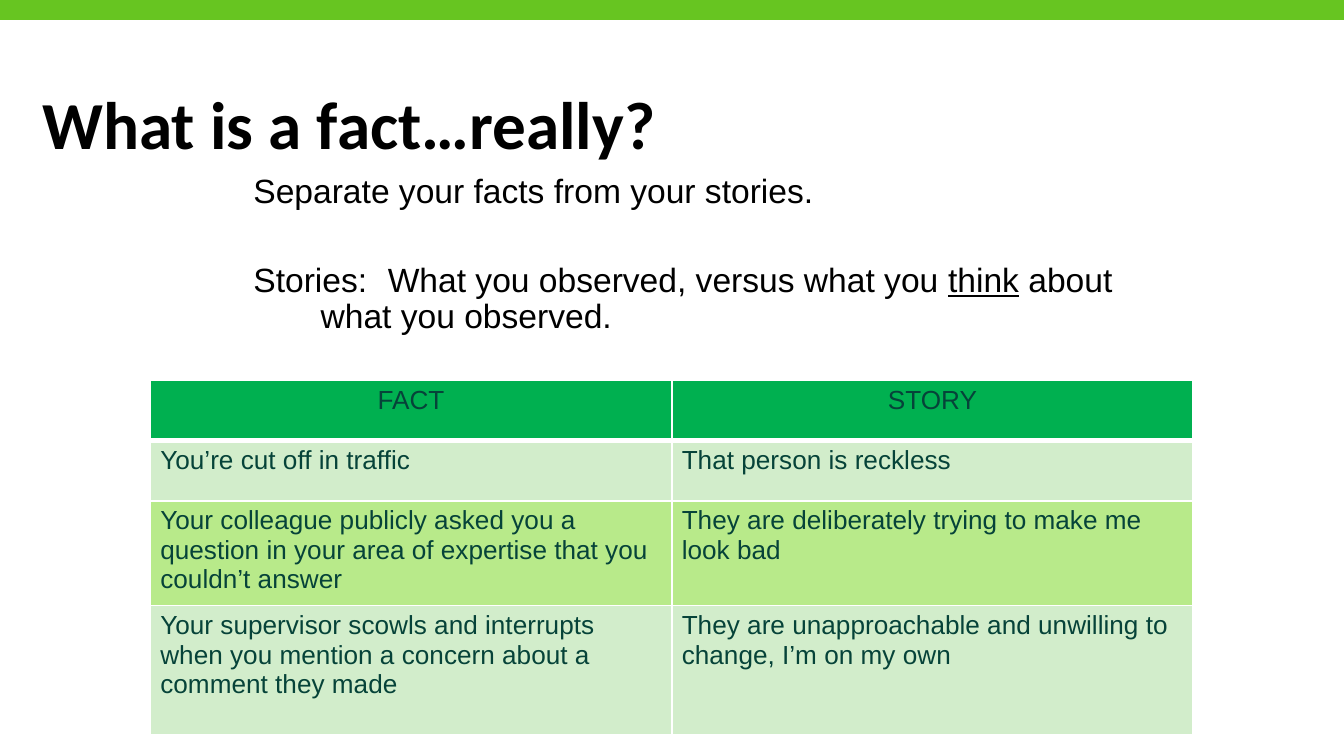
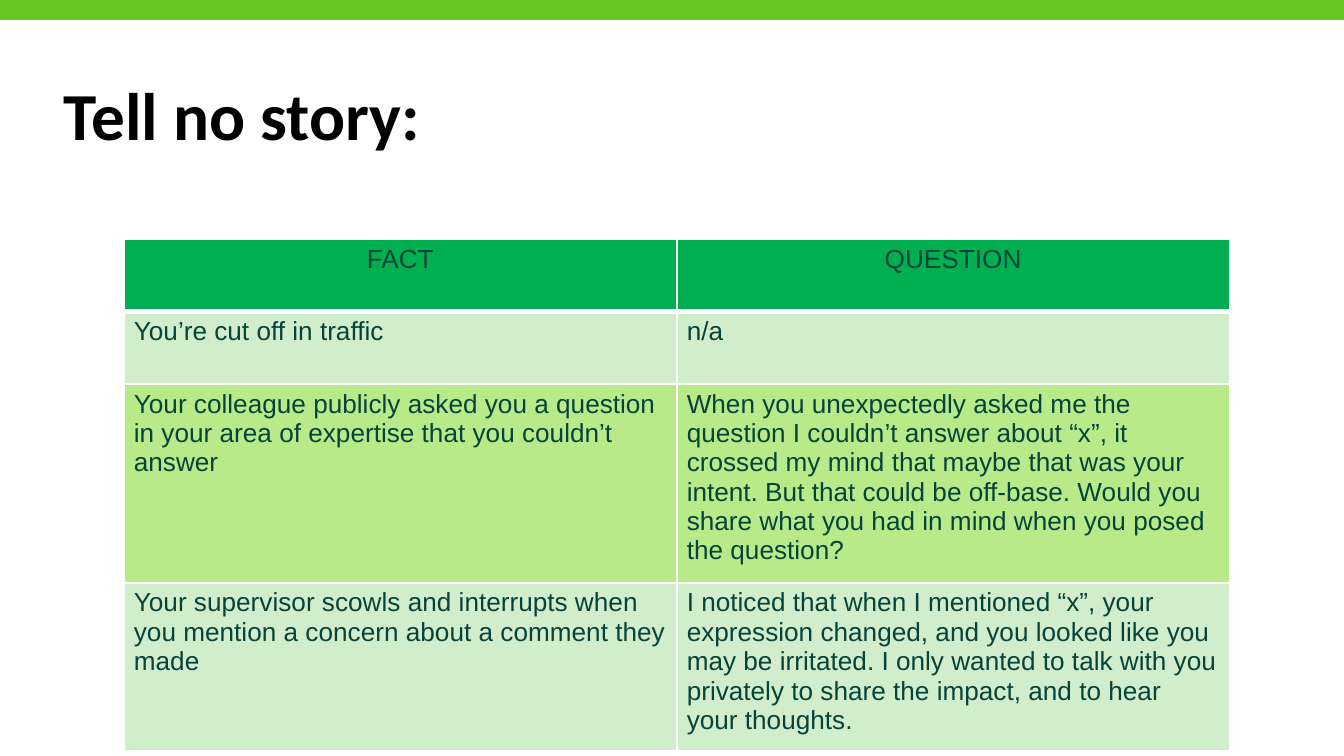
from lxml import etree
from pptx import Presentation
from pptx.dml.color import RGBColor
from pptx.enum import shapes, text
from pptx.oxml import ns
from pptx.util import Cm, Pt

BAND_GREEN = RGBColor(0x67, 0xC5, 0x21)
HEADER_GREEN = RGBColor(0x00, 0xB0, 0x50)
PALE_GREEN = RGBColor(0xD2, 0xED, 0xCB)
LIME = RGBColor(0xB8, 0xEA, 0x8A)
TABLE_TEXT = RGBColor(0x06, 0x43, 0x39)
BLACK = RGBColor(0x00, 0x00, 0x00)
WHITE = RGBColor(0xFF, 0xFF, 0xFF)
ROW_FILLS = [HEADER_GREEN, PALE_GREEN, LIME, PALE_GREEN]

SLIDE_WIDTH, SLIDE_HEIGHT = Cm(25.4), Cm(14.29)
INSET_X, INSET_Y = Cm(0.19), Cm(0.1)

FACTS = [
    "FACT",
    "You’re cut off in traffic",
    "Your colleague publicly asked you a question in your area of expertise "
    "that you couldn’t answer",
    "Your supervisor scowls and interrupts when you mention a concern about "
    "a comment they made",
]
STORIES = [
    "STORY",
    "That person is reckless",
    "They are deliberately trying to make me look bad",
    "They are unapproachable and unwilling to change, I’m on my own",
]
QUESTIONS = [
    "QUESTION",
    "n/a",
    "When you unexpectedly asked me the question I couldn’t answer about “x”, "
    "it crossed my mind that maybe that was your intent. But that could be "
    "off-base. Would you share what you had in mind when you posed the question?",
    "I noticed that when I mentioned “x”, your expression changed, and you "
    "looked like you may be irritated. I only wanted to talk with you privately "
    "to share the impact, and to hear your thoughts.",
]


def set_insets(target):
    """Apply the shared margins to a text frame or a table cell."""
    target.margin_left = target.margin_right = INSET_X
    target.margin_top = target.margin_bottom = INSET_Y


def format_paragraph(paragraph, font_name, size, color, bold=False):
    for run in paragraph.runs:
        run.font.name = font_name
        run.font.size = Pt(size)
        run.font.color.rgb = color
        run.font.bold = bold


def add_text_frame(slide, box):
    frame = slide.shapes.add_textbox(*box).text_frame
    frame.word_wrap = True
    set_insets(frame)
    return frame


def space_paragraph(paragraph, after=4.5):
    paragraph.line_spacing = 0.9
    paragraph.space_after = Pt(after)


def add_slide(presentation, title, title_box):
    """Blank slide with the top band and the title."""
    slide = presentation.slides.add_slide(presentation.slide_layouts[6])

    # Top band
    band = slide.shapes.add_shape(
        shapes.MSO_SHAPE.RECTANGLE, 0, 0, SLIDE_WIDTH, Cm(0.38))
    band.shadow.inherit = False
    band.fill.solid()
    band.fill.fore_color.rgb = BAND_GREEN
    band.line.fill.background()

    # Title
    frame = add_text_frame(slide, title_box)
    frame.vertical_anchor = text.MSO_ANCHOR.MIDDLE
    frame.text = title
    space_paragraph(frame.paragraphs[0])
    format_paragraph(frame.paragraphs[0], "Calibri", 36, BLACK, bold=True)
    return slide


def add_explanation(slide, box):
    frame = add_text_frame(slide, box)
    frame.text = "Separate your facts from your stories."
    advice = frame.paragraphs[0]
    space_paragraph(advice, after=28)

    definition = frame.add_paragraph()
    space_paragraph(definition)
    definition.add_run().text = "Stories: \tWhat you observed, versus what you "
    emphasis = definition.add_run()
    emphasis.text = "think"
    emphasis.font.underline = True
    definition.add_run().text = " about "
    definition.add_line_break()
    definition.add_run().text = "\twhat you observed."

    for paragraph in frame.paragraphs:
        format_paragraph(paragraph, "Arial", 18, BLACK)


def set_borders(cell, bottom_width):
    properties = cell._tc.get_or_add_tcPr()
    for side, width in zip("LRTB", (1, 1, 1, bottom_width)):
        line = etree.SubElement(
            properties, ns.qn(f"a:ln{side}"), w=str(Pt(width)))
        fill = etree.SubElement(line, ns.qn("a:solidFill"))
        etree.SubElement(fill, ns.qn("a:srgbClr"), val=str(WHITE))


def add_comparison(slide, left, top, width, row_heights, columns):
    """Table with a header row and equal columns."""
    table = slide.shapes.add_table(
        len(row_heights), len(columns), left, top, width,
        sum(row_heights)).table
    table.first_row = table.horz_banding = False

    for row, height in zip(table.rows, row_heights):
        row.height = height
    for column_index, entries in enumerate(columns):
        table.columns[column_index].width = width // len(columns)
        for row_index, entry in enumerate(entries):
            is_header = row_index == 0
            cell = table.cell(row_index, column_index)
            set_insets(cell)
            set_borders(cell, bottom_width=3 if is_header else 1)
            cell.fill.solid()
            cell.fill.fore_color.rgb = ROW_FILLS[row_index]
            cell.text_frame.text = entry
            paragraph = cell.text_frame.paragraphs[0]
            if is_header:
                paragraph.alignment = text.PP_ALIGN.CENTER
            format_paragraph(paragraph, "Arial", 14, TABLE_TEXT)


def add_fact_slide(presentation):
    slide = add_slide(presentation, "What is a fact…really?",
                      (Cm(0.61), Cm(1.12), Cm(19.71), Cm(2.59)))
    add_explanation(slide, (Cm(4.6), Cm(3.2), Cm(19.5), Cm(3.94)))
    add_comparison(slide, Cm(2.84), Cm(7.19), Cm(19.71),
                   [Cm(1.14), Cm(1.14), Cm(1.7), Cm(2.44)],
                   [FACTS, STORIES])


def add_question_slide(presentation):
    slide = add_slide(presentation, "Tell no story:",
                      (Cm(1.02), Cm(1.35), Cm(22.73), Cm(1.8)))
    add_comparison(slide, Cm(2.34), Cm(4.52), Cm(20.9),
                   [Cm(1.37), Cm(1.37), Cm(2.36), Cm(2.92)],
                   [FACTS, QUESTIONS])


def main():
    presentation = Presentation()
    presentation.slide_width = SLIDE_WIDTH
    presentation.slide_height = SLIDE_HEIGHT
    add_fact_slide(presentation)
    add_question_slide(presentation)
    presentation.save("out.pptx")


if __name__ == "__main__":
    main()
